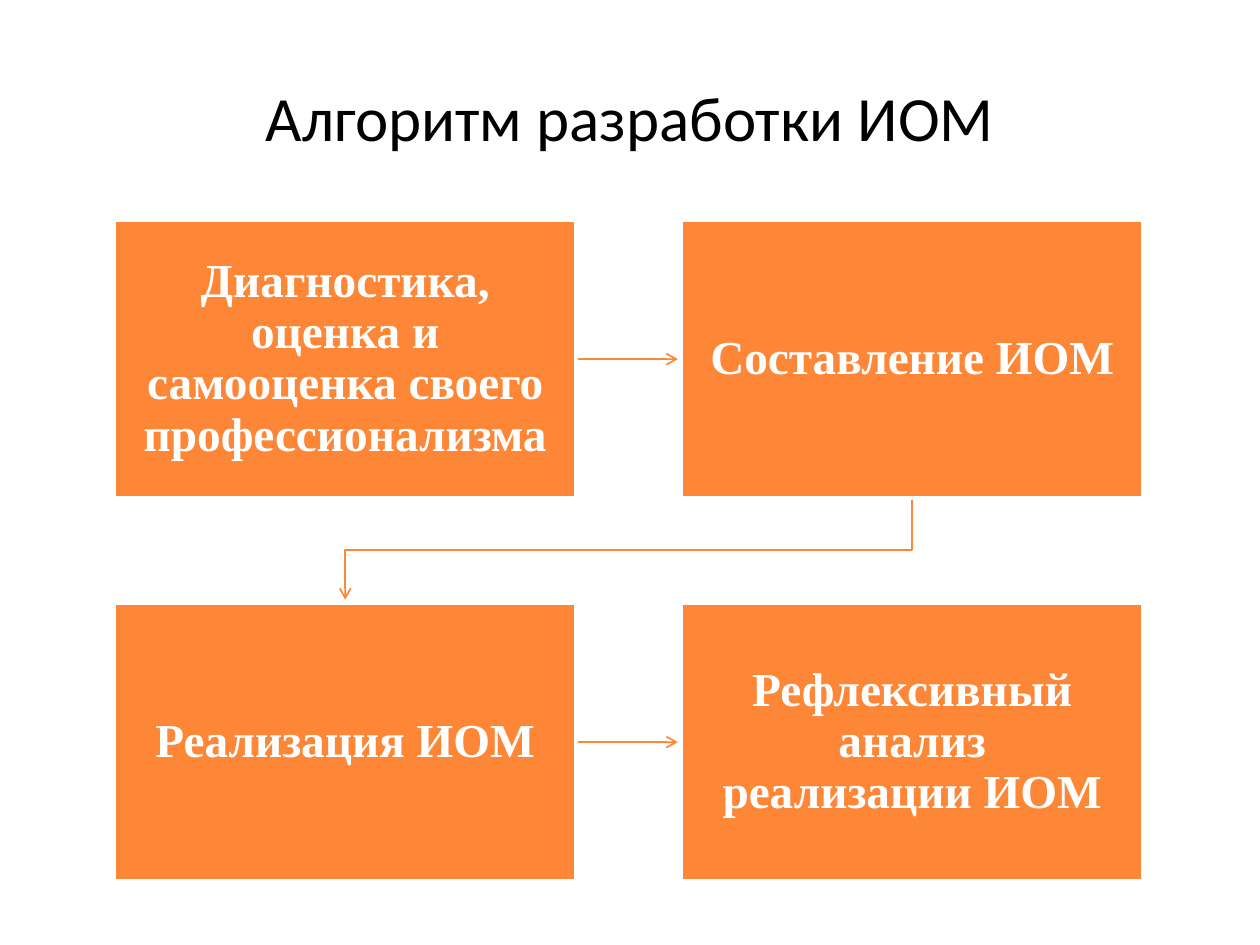
from lxml.etree import SubElement
from pptx import Presentation
from pptx.dml.color import RGBColor
from pptx.enum.shapes import MSO_CONNECTOR, MSO_SHAPE
from pptx.enum.text import MSO_ANCHOR, PP_ALIGN
from pptx.oxml.ns import qn
from pptx.util import Inches, Pt

ORANGE = RGBColor(0xFE, 0x86, 0x37)
WHITE = RGBColor(0xFF, 0xFF, 0xFF)
BLACK = RGBColor(0x00, 0x00, 0x00)

STEPS = [
    "Диагностика, оценка и самооценка своего профессионализма",
    "Составление ИОМ",
    "Реализация ИОМ",
    "Рефлексивный анализ реализации ИОМ",
]
STEP_WIDTH, STEP_HEIGHT = 3.66, 2.2
ARROW_GAP = 0.03  # between an arrow's end and a step


def write_text(shape, text, font, size, color, bold=False):
    """Fill a shape with one centred paragraph."""
    frame = shape.text_frame
    frame.word_wrap = True
    frame.vertical_anchor = MSO_ANCHOR.MIDDLE
    frame.text = text
    para = frame.paragraphs[0]
    para.alignment = PP_ALIGN.CENTER
    span = para.runs[0].font
    span.name, span.size, span.bold = font, Pt(size), bold
    span.color.rgb = color
    return frame


def add_title(page, left, top, width, height):
    box = page.shapes.add_textbox(
        Inches(left), Inches(top), Inches(width), Inches(height))
    write_text(box, "Алгоритм разработки ИОМ", "Calibri", 36, BLACK)


def add_step(page, text, left, top):
    box = page.shapes.add_shape(
        MSO_SHAPE.RECTANGLE, Inches(left), Inches(top),
        Inches(STEP_WIDTH), Inches(STEP_HEIGHT))
    box.shadow.inherit = False
    box.fill.solid()
    box.fill.fore_color.rgb = ORANGE
    box.line.color.rgb = WHITE
    box.line.width = Pt(2)
    frame = write_text(box, text, "Times New Roman", 27, WHITE, bold=True)
    frame.margin_left = frame.margin_right = Inches(0.21)
    frame.margin_top = frame.margin_bottom = Inches(0.21)
    frame.paragraphs[0].line_spacing = 0.9


def style_arrow(arrow):
    arrow.line.color.rgb = ORANGE
    arrow.line.width = Pt(1)
    SubElement(arrow.line._get_or_add_ln(), qn("a:tailEnd"), type="arrow")
    SubElement(arrow._element.spPr, qn("a:effectLst"))


def add_straight_arrow(page, start, end, middle):
    arrow = page.shapes.add_connector(
        MSO_CONNECTOR.STRAIGHT, Inches(start), Inches(middle),
        Inches(end), Inches(middle))
    style_arrow(arrow)


def add_return_arrow(page, start_x, start_y, end_x, end_y):
    """Run down, back to the left and down to the next row."""
    middle = (start_y + end_y) / 2
    points = [(start_x, middle), (end_x, middle), (end_x, end_y)]
    builder = page.shapes.build_freeform(Inches(start_x), Inches(start_y))
    builder.add_line_segments(
        [(Inches(x), Inches(y)) for x, y in points], close=False)
    arrow = builder.convert_to_shape()
    arrow.fill.background()
    style_arrow(arrow)


def add_process(page, left, top, width, height):
    """Place four steps in two rows, joined by arrows."""
    columns = [left, left + width - STEP_WIDTH]
    rows = [top, top + height - STEP_HEIGHT]
    for index, text in enumerate(STEPS):
        add_step(page, text, columns[index % 2], rows[index // 2])

    # Arrows within the rows
    for row in rows:
        add_straight_arrow(page, columns[0] + STEP_WIDTH + ARROW_GAP / 2,
                           columns[1] - ARROW_GAP, row + STEP_HEIGHT / 2)

    # Arrow from the first row to the second
    centres = [column + STEP_WIDTH / 2 for column in columns]
    add_return_arrow(page, centres[1], rows[0] + STEP_HEIGHT + ARROW_GAP / 2,
                     centres[0], rows[1] - ARROW_GAP)


def main():
    deck = Presentation()
    deck.slide_width, deck.slide_height = Inches(10), Inches(7.5)
    page = deck.slides.add_slide(deck.slide_layouts[6])
    add_title(page, 0.5, 0.3, 9, 1.25)
    add_process(page, 0.91, 1.75, 8.16, 5.24)
    deck.save("out.pptx")


if __name__ == "__main__":
    main()
